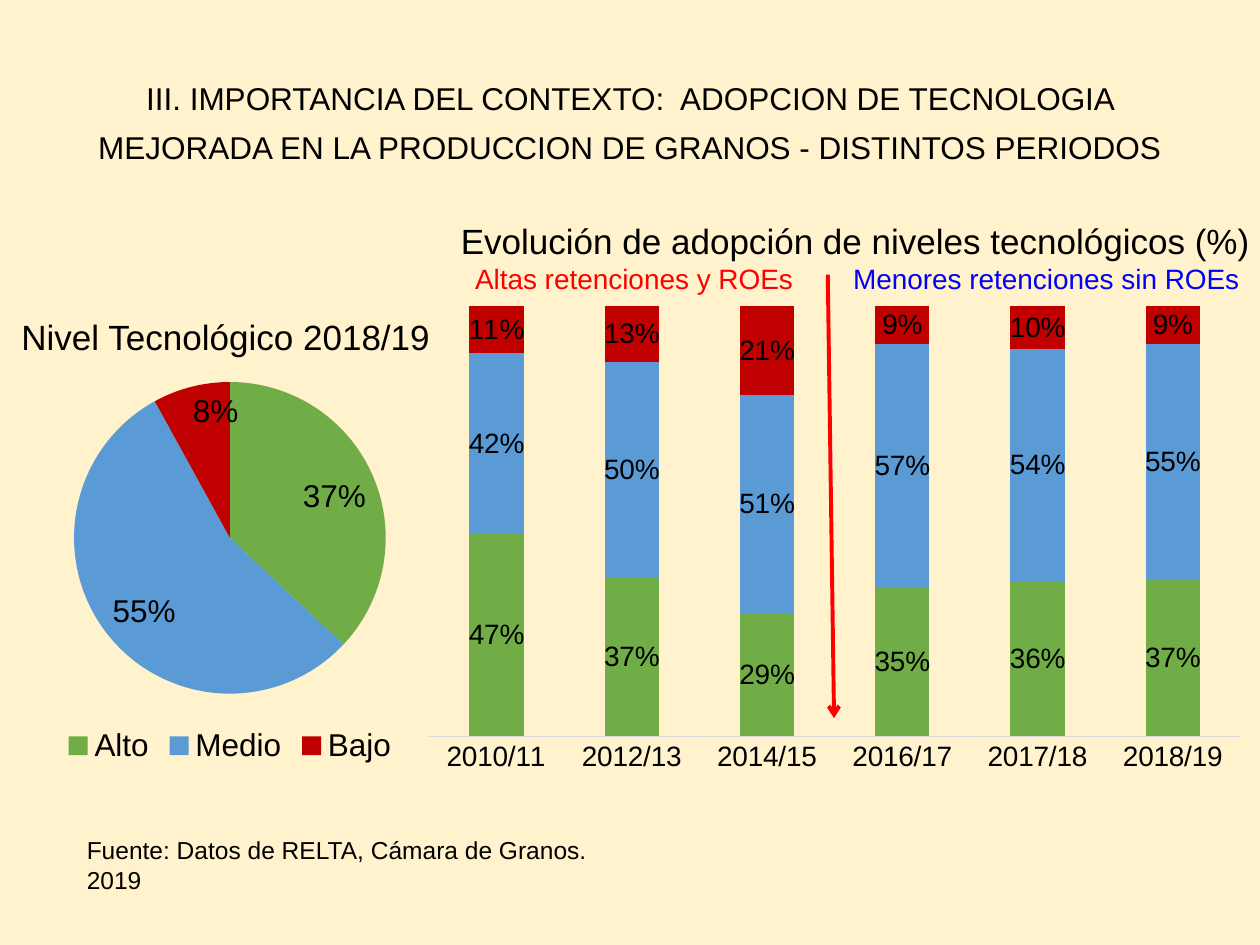
"""Builds a slide on the adoption of improved grain technology."""
import dataclasses

import lxml.etree
import pptx
import pptx.chart.data
import pptx.dml.color
import pptx.enum.chart
import pptx.enum.shapes
import pptx.enum.text
import pptx.oxml
import pptx.oxml.ns
import pptx.util

Inches = pptx.util.Inches
Pt = pptx.util.Pt
ChartType = pptx.enum.chart.XL_CHART_TYPE
LabelPosition = pptx.enum.chart.XL_LABEL_POSITION
Align = pptx.enum.text.PP_ALIGN


@dataclasses.dataclass(frozen=True)
class Theme:
    background: str = "FFF2CC"
    ink: str = "000000"
    axis: str = "D9D9D9"
    red: str = "FF0000"
    blue: str = "0000FF"
    levels: tuple = ("70AD47", "5B9BD5", "C00000")
    font: str = "Arial"
    heading: int = 20
    title: int = 18
    label: int = 16
    source: int = 14


def rgb(value):
    return pptx.dml.color.RGBColor.from_string(value)


def place(area):
    return [Inches(length) for length in area]


class Page:
    """Holds the theme and the current slide."""

    def __init__(self, deck, theme):
        self.theme = theme
        self.slide = deck.slides.add_slide(deck.slide_layouts[6])
        fill = self.slide.background.fill
        fill.solid()
        fill.fore_color.rgb = rgb(theme.background)

    def style(self, font, size, color=None):
        font.name = self.theme.font
        font.size = Pt(size)
        font.color.rgb = rgb(color or self.theme.ink)

    def text(self, area, words, size, align=Align.LEFT, spacing=None, wrap=True):
        box = self.slide.shapes.add_textbox(*place(area))
        frame = box.text_frame
        frame.word_wrap = wrap
        frame.auto_size = pptx.enum.text.MSO_AUTO_SIZE.SHAPE_TO_FIT_TEXT
        if wrap:
            frame.margin_left = frame.margin_right = Inches(0.05)
            frame.margin_top = frame.margin_bottom = Inches(0.03)
        frame.text = words
        para = frame.paragraphs[0]
        para.alignment = align
        if spacing:
            para.line_spacing = Pt(spacing)
        self.style(para.runs[0].font, size)
        return frame

    def tabbed_line(self, frame, parts, size, indent, stop):
        para = frame.add_paragraph()
        para.alignment = Align.LEFT
        for words, color in parts:
            span = para.add_run()
            span.text = words
            self.style(span.font, size, color)
        properties = para._p.get_or_add_pPr()
        properties.set("marL", str(Inches(indent)))
        properties.set("indent", "0")
        tabs = lxml.etree.SubElement(properties, pptx.oxml.ns.qn("a:tabLst"))
        tab = lxml.etree.SubElement(tabs, pptx.oxml.ns.qn("a:tab"))
        tab.set("pos", str(Inches(stop)))
        tab.set("algn", "l")

    def chart(self, kind, area, categories, series, layout):
        data = pptx.chart.data.CategoryChartData(number_format="0%")
        data.categories = categories
        for name, values in series:
            data.add_series(name, values)
        chart = self.slide.shapes.add_chart(kind, *place(area), data).chart
        chart.has_title = False
        chart.has_legend = False
        self.style(chart.font, self.theme.label)
        plot_area = chart._chartSpace.chart.plotArea
        for old in plot_area.findall(pptx.oxml.ns.qn("c:layout")):
            plot_area.remove(old)
        settings = [("layoutTarget", "inner"), ("xMode", "edge"), ("yMode", "edge")]
        settings += zip("xywh", layout)
        inner = "".join(f'<c:{tag} val="{value}"/>' for tag, value in settings)
        plot_area.insert(0, pptx.oxml.parse_xml(
            f'<c:layout {pptx.oxml.ns.nsdecls("c")}>'
            f'<c:manualLayout>{inner}</c:manualLayout></c:layout>'))
        return chart

    def labels(self, owner, size, position):
        labels = owner.data_labels
        labels.show_value = True
        labels.number_format = "0%"
        labels.number_format_is_linked = False
        labels.position = position
        self.style(labels.font, size)

    def paint(self, item, color):
        item.format.fill.solid()
        item.format.fill.fore_color.rgb = rgb(color)

    def columns(self, area, categories, series, layout):
        chart = self.chart(ChartType.COLUMN_STACKED_100, area, categories, series, layout)
        plot = chart.plots[0]
        plot.gap_width = 150
        plot.overlap = 100
        plot.vary_by_categories = False
        for item, color in zip(plot.series, self.theme.levels):
            self.paint(item, color)
            self.labels(item, self.theme.label, LabelPosition.CENTER)
        chart.value_axis.has_major_gridlines = False
        chart.value_axis.maximum_scale = 1
        chart.value_axis.visible = False
        axis = chart.category_axis
        axis.major_tick_mark = pptx.enum.chart.XL_TICK_MARK.NONE
        axis.format.line.color.rgb = rgb(self.theme.axis)
        axis.format.line.width = Pt(0.75)
        self.style(axis.tick_labels.font, self.theme.label)

    def pie(self, area, categories, series, layout):
        chart = self.chart(ChartType.PIE, area, categories, series, layout)
        chart.plots[0].vary_by_categories = True
        shares = chart.plots[0].series[0]
        for index, color in enumerate(self.theme.levels):
            self.paint(shares.points[index], color)
        self.labels(shares, self.theme.title, LabelPosition.INSIDE_END)
        chart.has_legend = True
        chart.legend.position = pptx.enum.chart.XL_LEGEND_POSITION.BOTTOM
        chart.legend.include_in_layout = False
        self.style(chart.legend.font, self.theme.title)

    def arrow(self, ends, color, width):
        line = self.slide.shapes.add_connector(
            pptx.enum.shapes.MSO_CONNECTOR.STRAIGHT, *place(ends))
        line.line.color.rgb = rgb(color)
        line.line.width = Pt(width)
        tail = lxml.etree.SubElement(line.line._get_or_add_ln(), pptx.oxml.ns.qn("a:tailEnd"))
        tail.set("type", "arrow")
        lxml.etree.SubElement(line._element.spPr, pptx.oxml.ns.qn("a:effectLst"))


theme = Theme()
deck = pptx.Presentation()
deck.slide_width, deck.slide_height = Inches(10), Inches(7.5)
page = Page(deck, theme)

page.text((0.12, 2.33, 3.7, 0.47), "Nivel Tecnológico 2018/19", theme.heading, spacing=34.3)

levels = ("Alto", "Medio", "Bajo")
seasons = ("2010/11", "2012/13", "2014/15", "2016/17", "2017/18", "2018/19")
adoption = (
    (0.47, 0.37, 0.29, 0.35, 0.36, 0.37),
    (0.42, 0.50, 0.51, 0.57, 0.54, 0.55),
    (0.11, 0.13, 0.21, 0.09, 0.10, 0.09),
)
page.columns((3.27, 2.35, 6.71, 3.84), seasons, list(zip(levels, adoption)),
             (0.02, 0.02, 0.96, 0.89))
page.pie((-0.17, 2.57, 3.99, 3.54), levels,
         [("Nivel Tecnológico", (0.37, 0.55, 0.08))], (0.19, 0.13, 0.62, 0.7))

heading = page.text((3.58, 1.71, 6.42, 0.66),
                    "Evolución de adopción de niveles tecnológicos (%)",
                    theme.heading, Align.CENTER)
page.tabbed_line(heading, [("Altas retenciones y ROEs\t", theme.red),
                           ("Menores retenciones sin ROEs", theme.blue)],
                 theme.label, 0.14, 3.16)
page.text((0.59, 0.51, 8.82, 0.8),
          "III. IMPORTANCIA DEL CONTEXTO:  ADOPCION DE TECNOLOGIA MEJORADA "
          "EN LA PRODUCCION DE GRANOS - DISTINTOS PERIODOS",
          theme.title, Align.CENTER, 28)
page.text((0.59, 6.58, 4.65, 0.34), "Fuente: Datos de RELTA, Cámara de Granos. 2019",
          theme.source, wrap=False)
page.arrow((6.57, 2.18, 6.62, 5.7), theme.red, 2.25)

deck.save("out.pptx")
